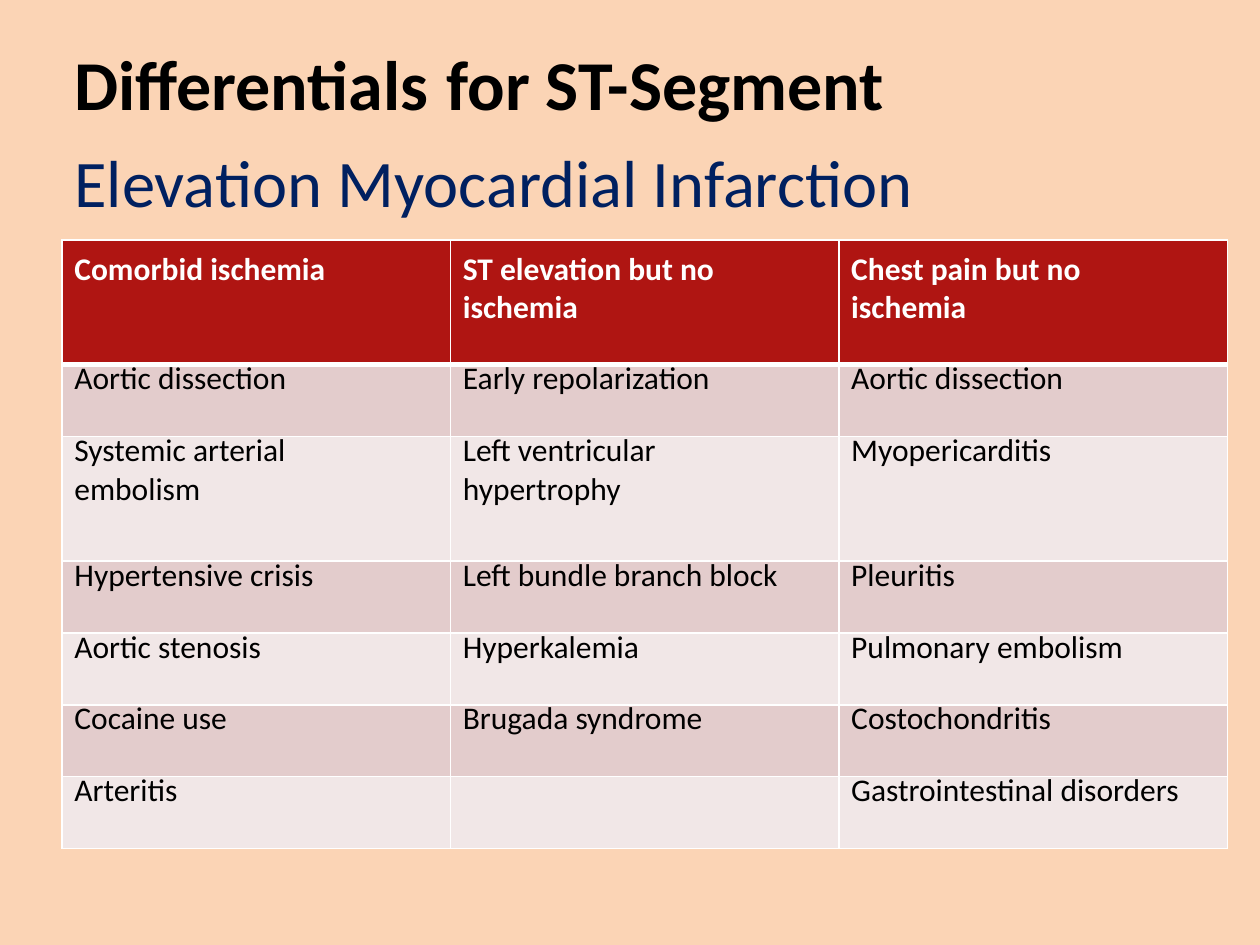
"""Build a slide with a table of differentials for ST-segment elevation."""
from lxml import etree
from pptx import Presentation, util as u
from pptx.dml.color import RGBColor
from pptx.enum import text
from pptx.oxml.ns import qn

PEACH = RGBColor(0xFB, 0xD4, 0xB5)
BLACK = RGBColor(0, 0, 0)
NAVY = RGBColor(0, 0x20, 0x60)
WHITE = RGBColor(0xFF, 0xFF, 0xFF)
RED = RGBColor(0xAF, 0x15, 0x12)
PINK = RGBColor(0xE3, 0xCC, 0xCC)
PALE = RGBColor(0xF1, 0xE7, 0xE7)

ROWS = [
    ["Comorbid ischemia", "ST elevation but no ischemia", "Chest pain but no ischemia"],
    ["Aortic dissection", "Early repolarization", "Aortic dissection"],
    ["Systemic arterial\nembolism", "Left ventricular\nhypertrophy", "Myopericarditis"],
    ["Hypertensive crisis", "Left bundle branch block", "Pleuritis"],
    ["Aortic stenosis", "Hyperkalemia", "Pulmonary embolism"],
    ["Cocaine use", "Brugada syndrome", "Costochondritis"],
    ["Arteritis", "", "Gastrointestinal disorders"],
]


def style(frame, size, color, bold=False):
    for par in frame.paragraphs:
        par.alignment = text.PP_ALIGN.LEFT
        for run in par.runs:
            run.font.name = "Calibri"
            run.font.size = u.Pt(size)
            run.font.bold = bold
            run.font.color.rgb = color


def edge(cell, side, width):
    line = etree.SubElement(cell._tc.get_or_add_tcPr(), qn("a:" + side), w=str(u.Pt(width)))
    fill = etree.SubElement(line, qn("a:solidFill"))
    etree.SubElement(fill, qn("a:srgbClr"), val=str(WHITE))


deck = Presentation()
deck.slide_width, deck.slide_height = u.Cm(25.4), u.Cm(19.05)
slide = deck.slides.add_slide(deck.slide_layouts[5])
slide.background.fill.solid()
slide.background.fill.fore_color.rgb = PEACH

title = slide.shapes.title
title.left, title.top, title.width, title.height = u.Cm(1.5), u.Cm(0.75), u.Cm(16.8), u.Cm(1.68)
sub = slide.shapes.add_textbox(u.Cm(1.5), u.Cm(2.78), u.Cm(18.3), u.Cm(1.65))
heads = [
    (title, "Differentials\tfor ST-Segment", 40, BLACK, True),
    (sub, "Elevation Myocardial Infarction", 38, NAVY, False),
]
for box, words, size, color, bold in heads:
    frame = box.text_frame
    frame.text = words
    frame.word_wrap = True
    frame.auto_size = text.MSO_AUTO_SIZE.NONE
    frame.vertical_anchor = text.MSO_ANCHOR.TOP
    frame.margin_left = frame.margin_right = frame.margin_bottom = 0
    frame.margin_top = u.Cm(0.06)
    style(frame, size, color, bold)
tabs = etree.SubElement(title.text_frame.paragraphs[0]._p.get_or_add_pPr(), qn("a:tabLst"))
etree.SubElement(tabs, qn("a:tab"), pos=str(u.Cm(7.5)), algn="l")

table = slide.shapes.add_table(7, 3, u.Cm(1.25), u.Cm(4.84), u.Cm(23.49), u.Cm(12.3)).table
for col in table.columns:
    col.width = u.Cm(7.83)
for r, words in enumerate(ROWS):
    head = r == 0
    table.rows[r].height = u.Cm(2.51 if r in (0, 2) else 1.45)
    for c, word in enumerate(words):
        cell = table.cell(r, c)
        cell.text = word
        cell.margin_left = u.Cm(0.25)
        cell.margin_right = u.Cm(1 if head else 0)
        cell.margin_top = u.Cm(0.2 if head else 0)
        cell.margin_bottom = 0
        edge(cell, "lnL", 1)
        edge(cell, "lnR", 1)
        edge(cell, "lnT", 3 if r == 1 else 1)
        edge(cell, "lnB", 3 if head else 1)
        cell.fill.solid()
        cell.fill.fore_color.rgb = RED if head else PINK if r % 2 else PALE
        style(cell.text_frame, 18, WHITE if head else BLACK, head)
        if not head:
            cell.text_frame.paragraphs[0].line_spacing = u.Pt(19.2)

deck.save("out.pptx")
